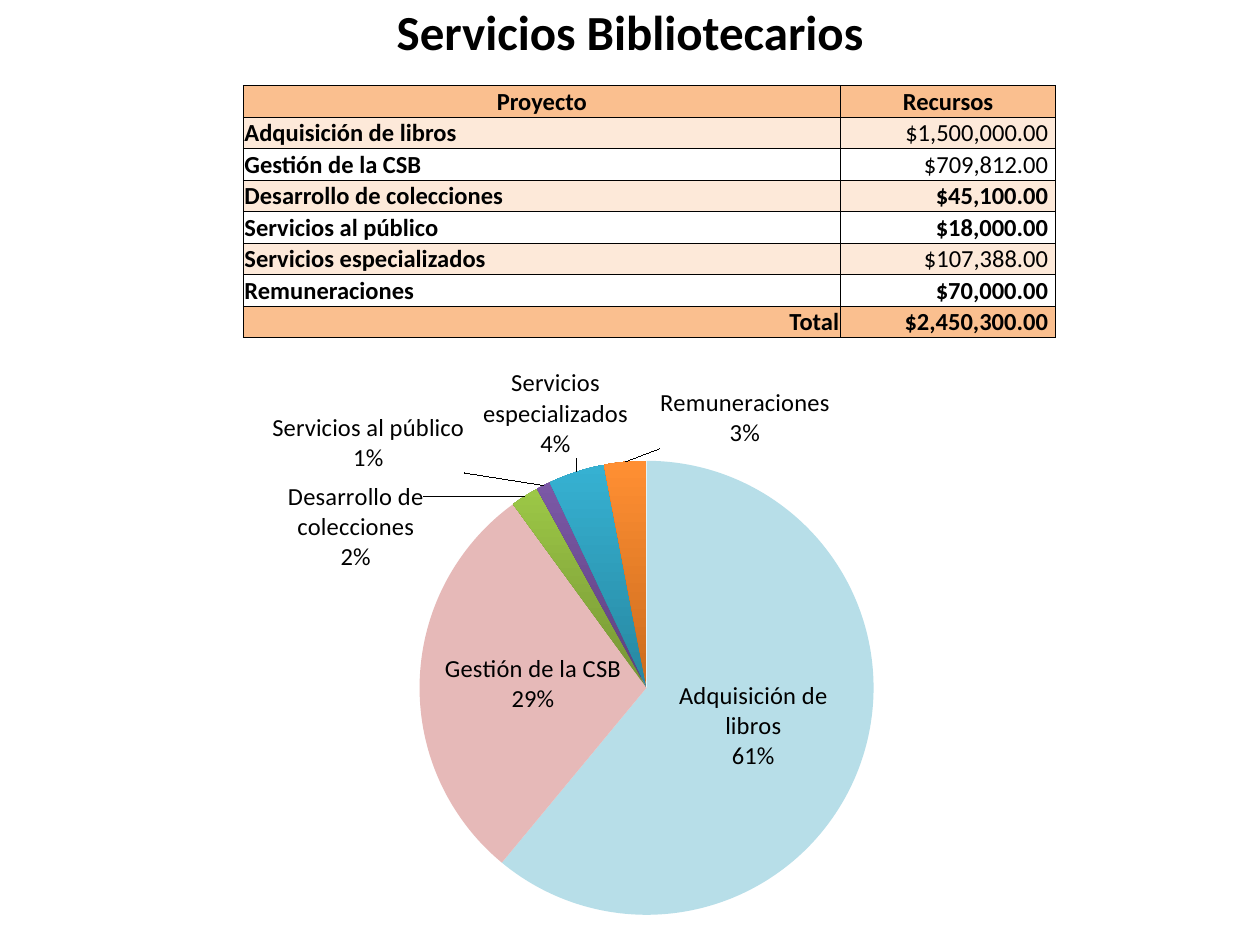
from pptx import Presentation
from pptx.chart.data import CategoryChartData
from pptx.dml.color import RGBColor
from pptx.enum.chart import XL_CHART_TYPE as ChartType, XL_LABEL_POSITION as LabelPos
from pptx.enum.text import MSO_ANCHOR as Anchor, PP_ALIGN as Align
from pptx.oxml import parse_xml
from pptx.oxml.ns import nsdecls, qn
from pptx.util import Inches, Pt

BLACK = RGBColor(0, 0, 0)
WHITE = RGBColor(0xFF, 0xFF, 0xFF)
ORANGE = RGBColor(0xFA, 0xBF, 0x8F)
PEACH = RGBColor(0xFD, 0xE9, 0xD9)
PALE_BLUE = RGBColor(0xB7, 0xDE, 0xE8)
PINK = RGBColor(0xE6, 0xB9, 0xB8)
GREEN = RGBColor(0x9C, 0xC7, 0x46)
DARK_GREEN = RGBColor(0x76, 0x95, 0x35)
PURPLE = RGBColor(0x7B, 0x58, 0xA6)
DARK_PURPLE = RGBColor(0x5D, 0x41, 0x7E)
TEAL = RGBColor(0x36, 0xB1, 0xD2)
DARK_TEAL = RGBColor(0x27, 0x87, 0xA0)
AMBER = RGBColor(0xFF, 0x8F, 0x33)
DARK_AMBER = RGBColor(0xCB, 0x6C, 0x1D)
FONT = "Calibri"

PROJECTS = [
    ("Adquisición de libros", "$1,500,000.00", False),
    ("Gestión de la CSB", "$709,812.00", False),
    ("Desarrollo de colecciones", "$45,100.00", True),
    ("Servicios al público", "$18,000.00", True),
    ("Servicios especializados", "$107,388.00", False),
    ("Remuneraciones", "$70,000.00", True),
]
SHARES = [61, 29, 2, 1, 4, 3]
SLICE_COLORS = [(PALE_BLUE,), (PINK,), (DARK_GREEN, GREEN), (DARK_PURPLE, PURPLE),
                (DARK_TEAL, TEAL), (DARK_AMBER, AMBER)]
LABEL_SHIFTS = [None, None, (-0.09, 0.14), (-0.07, -0.01), (0.05, -0.01), (0.19, -0.01)]


def style_font(font, size=14, bold=False):
    """Apply the slide's typeface and colour to a font."""
    font.name, font.size, font.bold = FONT, Pt(size), bold
    font.color.rgb = BLACK


def write_text(frame, text, align=Align.LEFT, **style):
    """Write one formatted paragraph into a text frame."""
    paragraph = frame.paragraphs[0]
    paragraph.alignment = align
    run = paragraph.add_run()
    run.text = text
    style_font(run.font, **style)


def add_title(slide, left, top, width, height):
    """Place the slide title in its placeholder."""
    title = slide.shapes.title
    title.left, title.top, title.width, title.height = left, top, width, height
    frame = title.text_frame
    frame.word_wrap = True
    frame.vertical_anchor = Anchor.MIDDLE
    frame.margin_left = frame.margin_right = Inches(0.1)
    frame.margin_top, frame.margin_bottom = Inches(0.17), Inches(0.04)
    write_text(frame, "Servicios Bibliotecarios", Align.CENTER, size=28, bold=True)


def fill_cell(cell, text, color, right=0.01, **style):
    """Write a bordered, filled table cell."""
    cell.vertical_anchor = Anchor.MIDDLE
    cell.margin_left = cell.margin_top = Inches(0.01)
    cell.margin_right, cell.margin_bottom = Inches(right), 0
    for side in "LRTB":
        cell._tc.get_or_add_tcPr().append(parse_xml(
            f'<a:ln{side} {nsdecls("a")} w="{Pt(0.5)}"><a:solidFill>'
            f'<a:srgbClr val="{BLACK}"/></a:solidFill></a:ln{side}>'))
    cell.fill.solid()
    cell.fill.fore_color.rgb = color
    write_text(cell.text_frame, text, **style)


def add_budget_table(slide, left, top, width, height):
    """Place the table of projects and resources."""
    row_count = len(PROJECTS) + 2
    table = slide.shapes.add_table(row_count, 2, left, top, width, height).table
    table.first_row = table.horz_banding = False
    table.columns[1].width = Inches(1.71)
    table.columns[0].width = width - Inches(1.71)
    for row in table.rows:
        row.height = height // row_count
    for column, heading in enumerate(("Proyecto", "Recursos")):
        fill_cell(table.cell(0, column), heading, ORANGE, align=Align.CENTER, bold=True)
    for row, (project, amount, bold) in enumerate(PROJECTS, 1):
        band = PEACH if row % 2 else WHITE
        fill_cell(table.cell(row, 0), project, band, bold=True)
        fill_cell(table.cell(row, 1), amount, band, right=0.06, align=Align.RIGHT, bold=bold)
    last = row_count - 1
    fill_cell(table.cell(last, 0), "Total", ORANGE, align=Align.RIGHT, bold=True)
    fill_cell(table.cell(last, 1), "$2,450,300.00", ORANGE, right=0.06,
              align=Align.RIGHT, bold=True)


def make_layout(x, y, size=None):
    """Build a manual chart layout from fractions of the chart."""
    parts = {"x": x, "y": y}
    modes = ""
    if size:
        modes = ('<c:layoutTarget val="inner"/><c:xMode val="edge"/>'
                 '<c:yMode val="edge"/>')
        parts.update(zip("wh", size))
    values = "".join(f'<c:{key} val="{value}"/>' for key, value in parts.items())
    return parse_xml(f'<c:layout {nsdecls("c")}><c:manualLayout>{modes}{values}'
                     '</c:manualLayout></c:layout>')


def show_name_and_percent(labels):
    """Make a label element show category and percentage on separate lines."""
    for tag, value in (("showVal", "0"), ("showCatName", "1"), ("showPercent", "1")):
        labels.find(qn(f"c:{tag}")).set("val", value)
    labels.find(qn("c:showBubbleSize")).addnext(
        parse_xml(f'<c:separator {nsdecls("c")}>\n</c:separator>'))


def add_share_pie(slide, left, top, width, height):
    """Place the pie chart of each project's share."""
    data = CategoryChartData()
    data.categories = [project for project, _, _ in PROJECTS]
    data.add_series("Series 1", SHARES)
    chart = slide.shapes.add_chart(ChartType.PIE, left, top, width, height, data).chart
    chart.has_legend = chart.has_title = False
    style_font(chart.font, size=10)
    plot_area = chart._chartSpace.chart.plotArea
    for old_layout in plot_area.findall(qn("c:layout")):
        plot_area.remove(old_layout)
    plot_area.insert(0, make_layout(0.31, 0.18, (0.42, 0.77)))
    chart.plots[0].vary_by_categories = True
    series = chart.plots[0].series[0]
    style_font(series.data_labels.font)
    for index, (colors, shift) in enumerate(zip(SLICE_COLORS, LABEL_SHIFTS)):
        point = series.points[index]
        fill = point.format.fill
        if len(colors) == 1:
            fill.solid()
            fill.fore_color.rgb = colors[0]
        else:
            fill.gradient()
            fill.gradient_angle = 90
            for stop, color in zip(fill.gradient_stops, colors):
                stop.color.rgb = color
        label = point.data_label
        style_font(label.font)
        label.position = LabelPos.OUTSIDE_END if shift else LabelPos.CENTER
    labels = series._element.find(qn("c:dLbls"))
    show_name_and_percent(labels)
    for label, shift in zip(labels.findall(qn("c:dLbl")), LABEL_SHIFTS):
        show_name_and_percent(label)
        if shift:
            label.find(qn("c:idx")).addnext(make_layout(*shift))


def main():
    """Build and save the slide."""
    deck = Presentation()
    deck.slide_width, deck.slide_height = Inches(10), Inches(7.5)
    slide = deck.slides.add_slide(deck.slide_layouts[5])
    add_budget_table(slide, Inches(1.93), Inches(0.68), Inches(6.45), Inches(2))
    add_title(slide, Inches(0.59), Inches(-0.16), Inches(8.82), Inches(0.68))
    add_share_pie(slide, Inches(0.67), Inches(2.81), Inches(8.58), Inches(4.69))
    deck.save("out.pptx")


if __name__ == "__main__":
    main()
